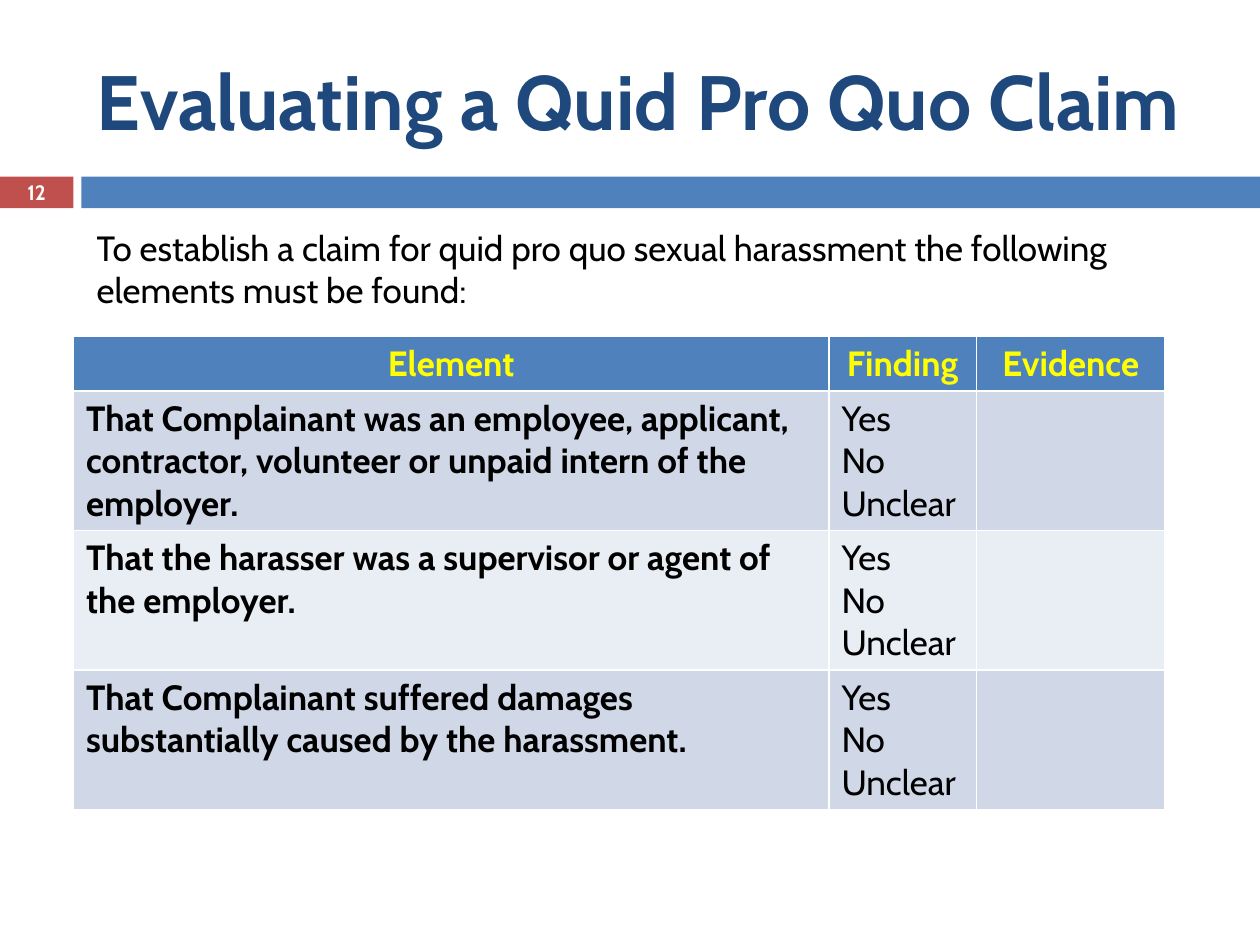
import pptx
import pptx.dml.color
import pptx.enum.shapes
import pptx.enum.text
import pptx.util

Cm, Pt = pptx.util.Cm, pptx.util.Pt
RGBColor = pptx.dml.color.RGBColor
ALIGN = pptx.enum.text.PP_ALIGN
ANCHOR = pptx.enum.text.MSO_ANCHOR

NAVY = RGBColor(0x1F, 0x49, 0x7D)
BLUE = RGBColor(0x4F, 0x81, 0xBD)
RED = RGBColor(0xC0, 0x50, 0x4D)
YELLOW = RGBColor(0xFF, 0xFF, 0x00)
WHITE = RGBColor(0xFF, 0xFF, 0xFF)
BLACK = RGBColor(0x00, 0x00, 0x00)
BANDS = [RGBColor(0xD0, 0xD8, 0xE8), RGBColor(0xE9, 0xED, 0xF4)]

HEADINGS = ["Element", "Finding", "Evidence"]
ELEMENTS = [
    "That Complainant was an employee, applicant, contractor, volunteer "
    "or unpaid intern of the employer.",
    "That the harasser was a supervisor or agent of the employer.",
    "That Complainant suffered damages substantially caused by the harassment.",
]
FINDINGS = ["Yes", "No", "Unclear"]

TITLE_STYLE = {"size": Pt(44), "bold": True}
NUMBER_STYLE = {"size": Pt(11.9), "bold": True}
BODY_STYLE = {"size": Pt(20), "bold": False}
BOLD_STYLE = {"size": Pt(20), "bold": True}


def write(tf, lines, style, color, align=ALIGN.LEFT):
    for i, line in enumerate(lines):
        p = tf.paragraphs[0] if i == 0 else tf.add_paragraph()
        p.alignment = align
        r = p.add_run()
        r.text = line
        r.font.name = "Cabin"
        r.font.color.rgb = color
        for name, value in style.items():
            setattr(r.font, name, value)


def add_text(s, box, text, style, color, anchor=ANCHOR.TOP):
    tf = s.shapes.add_textbox(*box).text_frame
    tf.word_wrap = True
    tf.vertical_anchor = anchor
    write(tf, [text], style, color)
    return tf


def add_bar(s, box, color):
    sp = s.shapes.add_shape(pptx.enum.shapes.MSO_SHAPE.RECTANGLE, *box)
    sp.shadow.inherit = False
    sp.fill.solid()
    sp.fill.fore_color.rgb = color
    sp.line.fill.background()
    return sp


def add_number_band(s, left, top, width, height, number):
    """Draw the red slide-number tab and the blue bar to its right."""
    tab, gap = Cm(1.48), Cm(0.16)
    tf = add_bar(s, (left, top, tab, height), RED).text_frame
    for side in ("left", "top", "right", "bottom"):
        setattr(tf, f"margin_{side}", 0)
    tf.vertical_anchor = ANCHOR.MIDDLE
    write(tf, [number], NUMBER_STYLE, WHITE, ALIGN.CENTER)
    add_bar(s, (left + tab + gap, top, width - tab - gap, height), BLUE)


def fill_cell(cell, color, lines, *text_format):
    cell.fill.solid()
    cell.fill.fore_color.rgb = color
    write(cell.text_frame, lines, *text_format)


def add_findings_table(s, left, top, width, height):
    header = Cm(1.06)
    table = s.shapes.add_table(
        len(ELEMENTS) + 1, len(HEADINGS), left, top, width, height).table
    for column, share in zip(table.columns, (0.692, 0.135, 0.173)):
        column.width = int(width * share)
    for i, row in enumerate(table.rows):
        row.height = (height - header) // len(ELEMENTS) if i else header

    for col, heading in enumerate(HEADINGS):
        fill_cell(table.cell(0, col), BLUE, [heading],
                  BOLD_STYLE, YELLOW, ALIGN.CENTER)
    for i, element in enumerate(ELEMENTS):
        band = BANDS[i % 2]
        columns = [([element], BOLD_STYLE), (FINDINGS, BODY_STYLE), ([], BODY_STYLE)]
        for col, (lines, style) in enumerate(columns):
            fill_cell(table.cell(i + 1, col), band, lines, style, BLACK)


def main():
    prs = pptx.Presentation()
    prs.slide_width, prs.slide_height = Cm(25.4), Cm(19.05)
    s = prs.slides.add_slide(prs.slide_layouts[6])

    add_number_band(s, 0, Cm(3.56), prs.slide_width, Cm(0.64), "12")
    add_text(s, (Cm(1.7), Cm(0.64), Cm(22.65), Cm(2.74)),
             "Evaluating a Quid Pro Quo Claim", TITLE_STYLE, NAVY, ANCHOR.MIDDLE)
    tf = add_text(s, (Cm(1.7), Cm(4.45), Cm(22.65), Cm(12.5)),
                  "To establish a claim for quid pro quo sexual harassment "
                  "the following elements must be found:", BODY_STYLE, BLACK)
    tf.paragraphs[0].space_before = Pt(7)
    add_findings_table(s, Cm(1.48), Cm(6.78), Cm(22.01), Cm(9.5))

    prs.save("out.pptx")


if __name__ == "__main__":
    main()
